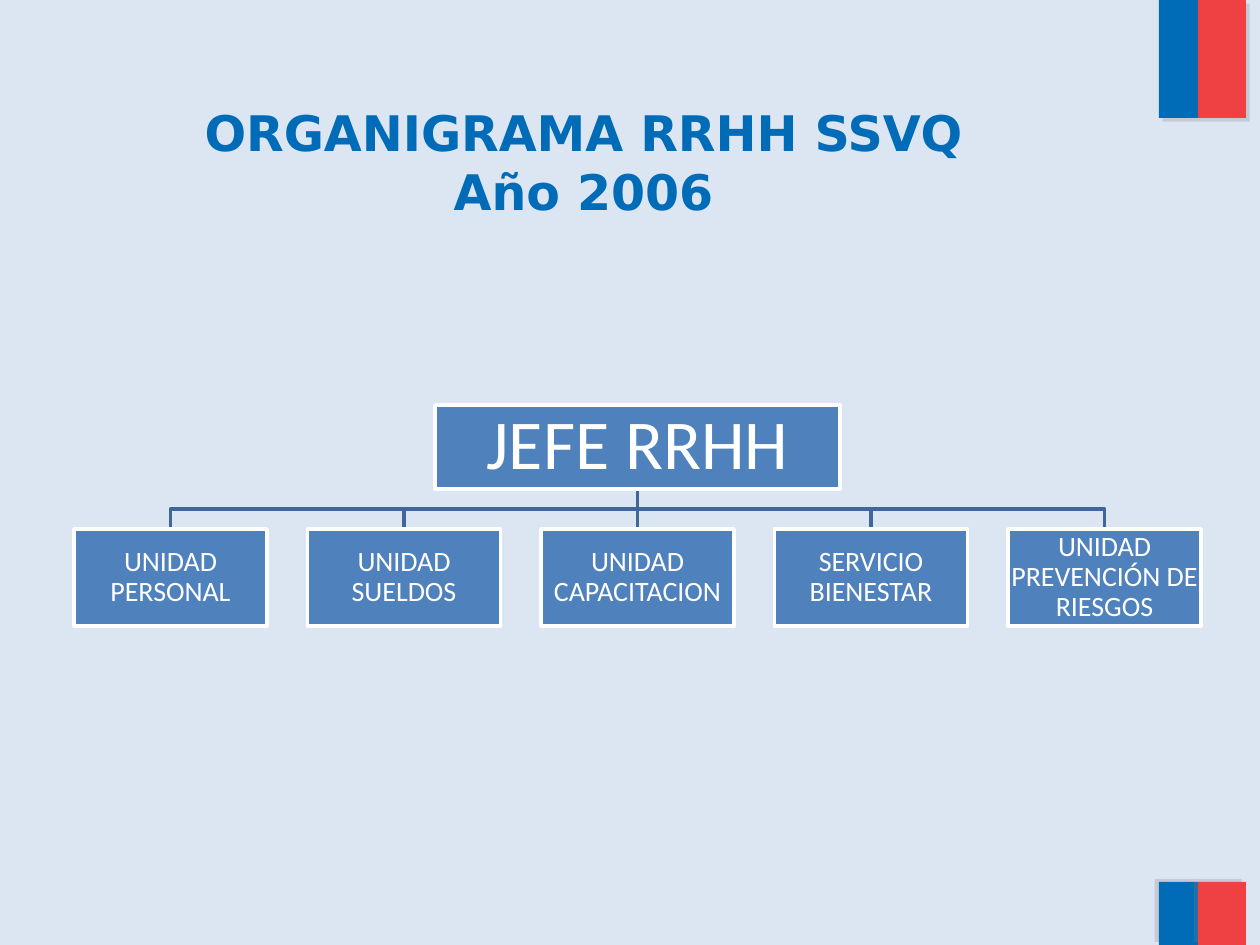
"""Build the human resources organisation chart slide."""
import pptx
import pptx.util
import pptx.dml.color
import pptx.enum.shapes
import pptx.enum.text
import pptx.oxml
import pptx.oxml.ns

PX = 914400 // 126
BLUE = pptx.dml.color.RGBColor(0x00, 0x6C, 0xB7)
RED = pptx.dml.color.RGBColor(0xEF, 0x41, 0x44)
BOX_BLUE = pptx.dml.color.RGBColor(0x4F, 0x81, 0xBD)
LINE_BLUE = pptx.dml.color.RGBColor(0x3F, 0x67, 0x97)
SHADOW_GREY = pptx.dml.color.RGBColor(0x80, 0x80, 0x80)
BACKGROUND = pptx.dml.color.RGBColor(0xDC, 0xE6, 0xF2)
WHITE = pptx.dml.color.RGBColor(0xFF, 0xFF, 0xFF)

TITLE = "ORGANIGRAMA RRHH SSVQ\vAño 2006"
TITLE_PLACE = (21, 96, 1125, 94)
HEAD = "JEFE RRHH"
HEAD_PLACE = (435, 405, 405, 84)
UNITS = [
    "UNIDAD PERSONAL",
    "UNIDAD SUELDOS",
    "UNIDAD CAPACITACION",
    "SERVICIO BIENESTAR",
    "UNIDAD PREVENCIÓN DE RIESGOS",
]
UNITS_LEFT, UNITS_RIGHT, UNITS_TOP = 74, 1201, 529
UNIT_WIDTH, UNIT_HEIGHT = 193, 97
FLAG_STRIPES = [(1159, 39, BLUE), (1198, 48, RED)]
FLAGS = [(0, 118, 45), (882, 63, 215)]


def emu(*lengths):
    return [round(length * PX) for length in lengths]


def write(frame, text, size, font="Calibri", color=WHITE, bold=False, inset=0.01,
          anchor=pptx.enum.text.MSO_ANCHOR.MIDDLE, spacing=None):
    frame.word_wrap = True
    frame.auto_size = pptx.enum.text.MSO_AUTO_SIZE.NONE
    frame.vertical_anchor = anchor
    frame.margin_left = frame.margin_right = pptx.util.Inches(inset)
    frame.margin_top = frame.margin_bottom = pptx.util.Inches(min(inset, 0.05))
    para = frame.paragraphs[0]
    para.text = text
    para.alignment = pptx.enum.text.PP_ALIGN.CENTER
    para.line_spacing = spacing
    for span in para.runs:
        span.font.size = pptx.util.Pt(size)
        span.font.name = font
        span.font.bold = bold
        span.font.color.rgb = color


def add_box(page, place, fill):
    box = page.shapes.add_shape(pptx.enum.shapes.MSO_SHAPE.RECTANGLE, *emu(*place))
    box.shadow.inherit = False
    box.fill.solid()
    box.fill.fore_color.rgb = fill
    box.line.fill.background()
    return box


def add_flag(page, top, height, angle):
    for left, width, color in FLAG_STRIPES:
        stripe = add_box(page, (left, top, width, height), color)
        effects = stripe._element.spPr.find(pptx.oxml.ns.qn("a:effectLst"))
        effects.append(pptx.oxml.parse_xml(
            f'<a:outerShdw {pptx.oxml.ns.nsdecls("a")} dist="38100" dir="{angle * 60000}">'
            f'<a:srgbClr val="{SHADOW_GREY}"><a:alpha val="25000"/></a:srgbClr></a:outerShdw>'))


def add_unit_box(page, place, text, size, inset):
    box = add_box(page, place, BOX_BLUE)
    box.line.color.rgb = WHITE
    box.line.width = pptx.util.Pt(2)
    write(box.text_frame, text, size, inset=inset, spacing=0.9)


def add_branch(page, start, end):
    if start[0] == end[0]:
        branch = page.shapes.add_connector(
            pptx.enum.shapes.MSO_CONNECTOR.STRAIGHT, *emu(*start, *end))
        branch._element.spPr.append(pptx.oxml.parse_xml(
            f'<a:effectLst {pptx.oxml.ns.nsdecls("a")}/>'))
    else:
        middle = (start[1] + end[1]) / 2
        builder = page.shapes.build_freeform(*emu(*start))
        corners = [(start[0], middle), (end[0], middle), end]
        builder.add_line_segments([emu(*corner) for corner in corners], close=False)
        branch = builder.convert_to_shape()
        branch.shadow.inherit = False
        branch.fill.background()
    branch.line.color.rgb = LINE_BLUE
    branch.line.width = pptx.util.Pt(2)


def main():
    deck = pptx.Presentation()
    deck.slide_width, deck.slide_height = emu(1260, 945)
    page = deck.slides.add_slide(deck.slide_layouts[5])
    page.background.fill.solid()
    page.background.fill.fore_color.rgb = BACKGROUND

    for flag in FLAGS:
        add_flag(page, *flag)

    title = page.shapes.title
    title.left, title.top, title.width, title.height = emu(*TITLE_PLACE)
    write(title.text_frame, TITLE, 28, font="DejaVu Sans", color=BLUE, bold=True,
          inset=0.1, anchor=pptx.enum.text.MSO_ANCHOR.TOP)

    pitch = (UNITS_RIGHT - UNITS_LEFT - UNIT_WIDTH) / (len(UNITS) - 1)
    lefts = [UNITS_LEFT + index * pitch for index in range(len(UNITS))]
    head_left, head_top, head_width, head_height = HEAD_PLACE
    start = (head_left + head_width / 2, head_top + head_height)
    for left in lefts:
        add_branch(page, start, (left + UNIT_WIDTH / 2, UNITS_TOP))

    add_unit_box(page, HEAD_PLACE, HEAD, 40, 0.03)
    for left, unit in zip(lefts, UNITS):
        add_unit_box(page, (left, UNITS_TOP, UNIT_WIDTH, UNIT_HEIGHT), unit, 16, 0.01)

    deck.save("out.pptx")


if __name__ == "__main__":
    main()
